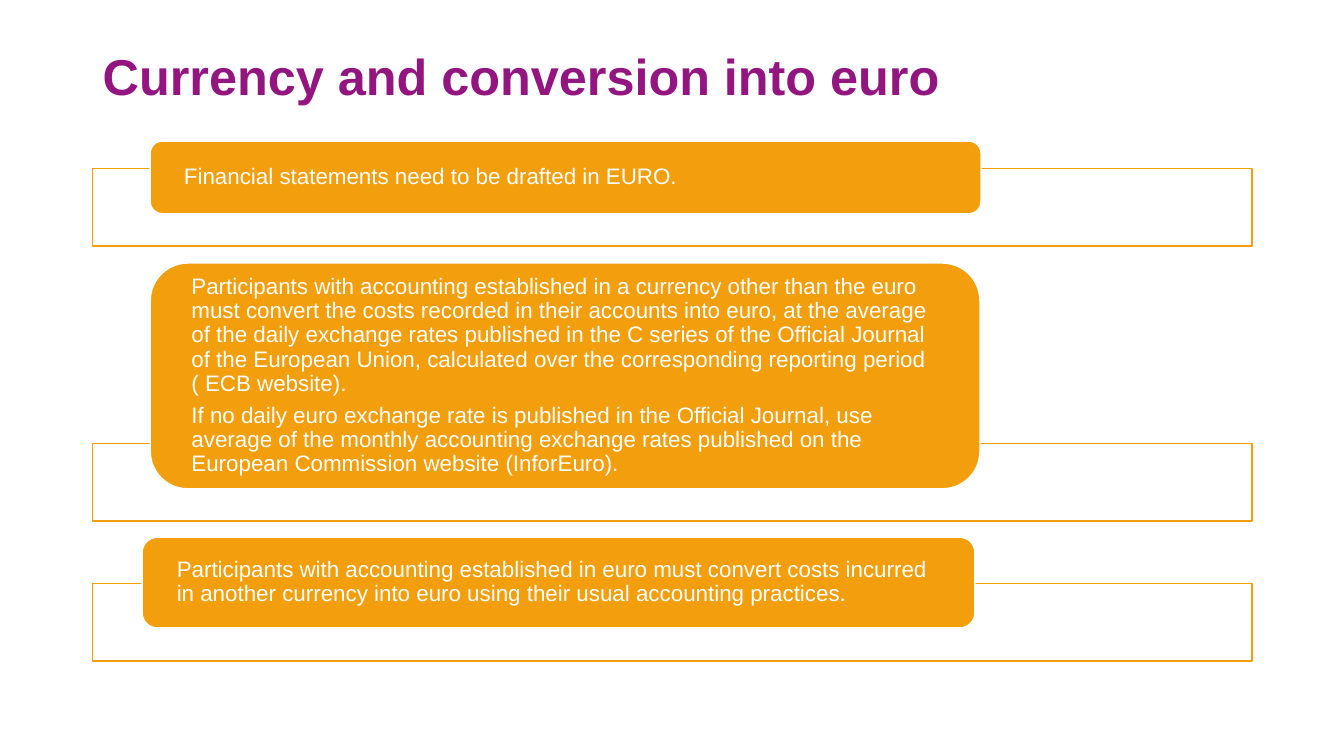
import pptx
import pptx.util
import pptx.dml.color
import pptx.enum.shapes
import pptx.enum.text

Inches = pptx.util.Inches
Pt = pptx.util.Pt
SHAPE = pptx.enum.shapes.MSO_SHAPE
ANCHOR = pptx.enum.text.MSO_ANCHOR
ORANGE, PURPLE, WHITE = "F39E0C", "931680", "FFFFFF"


def rgb(color):
    return pptx.dml.color.RGBColor.from_string(color)


def add_text(sp, paragraphs, size, color, bold=False, anchor=ANCHOR.MIDDLE,
             margins=(0.3, 0, 0.3, 0), line_spacing=1.0, space_after=0):
    tf = sp.text_frame
    tf.word_wrap = True
    tf.vertical_anchor = anchor
    tf.margin_left, tf.margin_top, tf.margin_right, tf.margin_bottom = map(Inches, margins)
    for i, text in enumerate(paragraphs):
        p = tf.add_paragraph() if i else tf.paragraphs[0]
        p.alignment = pptx.enum.text.PP_ALIGN.LEFT
        p.line_spacing = line_spacing
        p.space_after = Pt(space_after)
        r = p.add_run()
        r.text = text
        r.font.name = "Arial"
        r.font.size = Pt(size)
        r.font.bold = bold
        r.font.color.rgb = rgb(color)


prs = pptx.Presentation()
prs.slide_width, prs.slide_height = Inches(13.33), Inches(7.5)
s = prs.slides.add_slide(prs.slide_layouts[6])

title = s.shapes.add_textbox(Inches(0.92), Inches(0.39), Inches(11.5), Inches(0.66))
add_text(title, ["Currency and conversion into euro"], size=36, color=PURPLE, bold=True,
         anchor=ANCHOR.BOTTOM, margins=(0.1, 0.05, 0.1, 0))

rules = [
    (1.67, (1.49, 1.4, 8.24, 0.72), ["Financial statements need to be drafted in EURO."]),
    (4.4, (1.49, 2.61, 8.23, 2.24), [
        "Participants with accounting established in a currency other than the euro must convert "
        "the costs recorded in their accounts into euro, at the average of the daily exchange rates "
        "published in the C series of the Official Journal of the European Union, calculated over "
        "the corresponding reporting period ( ECB website).",
        "If no daily euro exchange rate is published in the Official Journal, use average of the "
        "monthly accounting exchange rates published on the European Commission website (InforEuro).",
    ]),
    (5.79, (1.41, 5.33, 8.26, 0.9), [
        "Participants with accounting established in euro must convert costs incurred in another "
        "currency into euro using their usual accounting practices.",
    ]),
]

for frame_top, label_box, paragraphs in rules:
    for kind, box, fill, line in (
        (SHAPE.RECTANGLE, (0.92, frame_top, 11.5, 0.77), WHITE, ORANGE),
        (SHAPE.ROUNDED_RECTANGLE, label_box, ORANGE, WHITE),
    ):
        sp = s.shapes.add_shape(kind, *map(Inches, box))
        sp.shadow.inherit = False
        sp.fill.solid()
        sp.fill.fore_color.rgb = rgb(fill)
        sp.line.color.rgb = rgb(line)
        sp.line.width = Pt(1)
    add_text(sp, paragraphs, size=16, color=WHITE, line_spacing=0.9, space_after=5.6)

prs.save("out.pptx")
